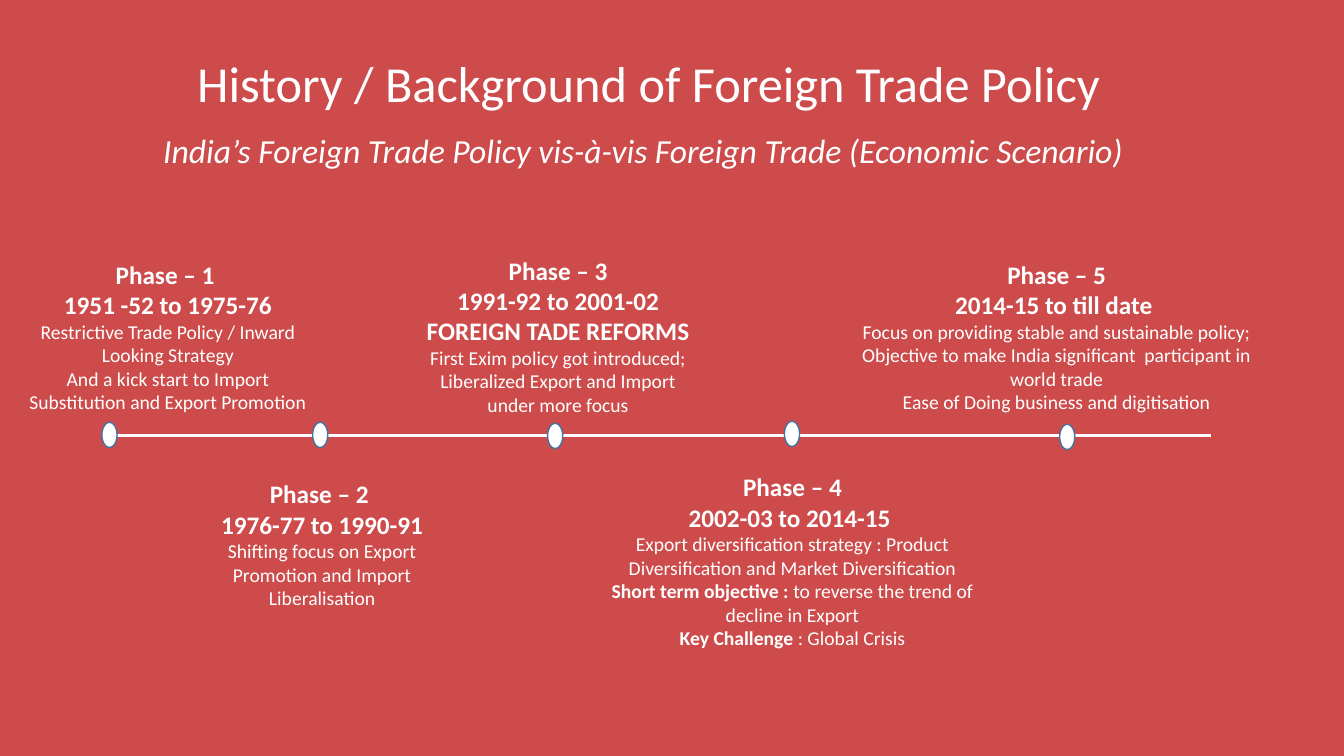
from dataclasses import dataclass

from lxml import etree
from pptx import Presentation
from pptx import util as u
from pptx.dml.color import RGBColor
from pptx.enum import shapes, text
from pptx.oxml import ns
from pptx.slide import Slide
from pptx.text.text import TextFrame

RED = RGBColor(0xCD, 0x4B, 0x4B)
WHITE = RGBColor(0xFF, 0xFF, 0xFF)
BLUE = RGBColor(0x43, 0x73, 0x9E)
FONT = "Calibri"
WIDTH, HEIGHT = u.Inches(13.33), u.Inches(7.5)
AXIS_LEFT, AXIS_RIGHT, AXIS_ROW = 7.58, 90.1, 57.6
DOT_WIDTH, DOT_HEIGHT = 1.13, 3.33


@dataclass(frozen=True)
class Run:
    words: str
    size: int = 14
    bold: bool = False
    italic: bool = False


@dataclass(frozen=True)
class Box:
    left: float
    top: float
    width: float
    height: float

    def emu(self) -> tuple[int, int, int, int]:
        return col(self.left), row(self.top), col(self.width), row(self.height)


@dataclass(frozen=True)
class Phase:
    box: Box
    dot_left: float
    dot_top: float
    paragraphs: list[list[Run]]


def col(percent: float) -> int:
    return round(WIDTH * percent / 100)


def row(percent: float) -> int:
    return round(HEIGHT * percent / 100)


def head(words: str) -> Run:
    return Run(words, 18, bold=True)


TITLE_BOX = Box(0, 6.27, 96.55, 17.47)
TITLE = [
    [Run("History / Background of Foreign Trade Policy", 36)],
    [Run("India’s Foreign Trade Policy vis-à-vis Foreign Trade (Economic Scenario)",
         24, italic=True), Run(" ", 36)],
]
PHASES = [
    Phase(Box(0.68, 33.6, 23.63, 22), 7.58, 55.87, [
        [head("Phase – 1 ")],
        [head("1951 -52 to 1975-76")],
        [Run("Restrictive Trade Policy / Inward Looking Strategy")],
        [Run("And a kick start to Import Substitution and Export Promotion")],
    ]),
    Phase(Box(15.23, 62.67, 17.48, 18.8), 23.26, 55.87, [
        [head("Phase – 2 ")],
        [head("1976-77 to 1990-91")],
        [Run("Shifting focus on Export Promotion and Import Liberalisation")],
    ]),
    Phase(Box(30.16, 33.07, 22.73, 22.93), 40.74, 56, [
        [head("Phase – 3")],
        [head("1991-92 to 2001-02 FOREIGN TADE REFORMS "),
         Run("First Exim policy got introduced; Liberalized Export and Import "
             "under more focus")],
    ]),
    Phase(Box(44.26, 61.73, 29.41, 25.07), 58.36, 55.73, [
        [head("Phase – 4")],
        [head("2002-03 to 2014-15 ")],
        [Run("Export diversification strategy : Product Diversification and "
             "Market Diversification")],
        [Run("Short term objective : ", bold=True),
         Run("to reverse the trend of decline in Export")],
        [Run("Key Challenge", bold=True), Run(" : Global Crisis")],
    ]),
    Phase(Box(63.39, 33.6, 30.46, 22), 78.84, 56.13, [
        [head("Phase – 5")],
        [head("2014-15 to till date ")],
        [Run("Focus on providing stable and sustainable policy;")],
        [Run("Objective to make India significant  participant in world trade")],
        [Run("Ease of Doing business and digitisation")],
    ]),
]


def write(tf: TextFrame, paragraphs: list[list[Run]]) -> None:
    tf.word_wrap = True
    tf.auto_size = text.MSO_AUTO_SIZE.NONE
    tf.vertical_anchor = text.MSO_ANCHOR.TOP
    for i, runs in enumerate(paragraphs):
        p = tf.add_paragraph() if i else tf.paragraphs[0]
        p.alignment = text.PP_ALIGN.CENTER
        for run in runs:
            r = p.add_run()
            r.text = run.words
            r.font.name = FONT
            r.font.size = u.Pt(run.size)
            r.font.bold = run.bold
            r.font.italic = run.italic
            r.font.color.rgb = WHITE


def add_title(s: Slide) -> None:
    sp = s.shapes.title
    sp.left, sp.top, sp.width, sp.height = TITLE_BOX.emu()
    write(sp.text_frame, TITLE)


def add_axis(s: Slide) -> None:
    line = s.shapes.add_connector(
        shapes.MSO_CONNECTOR.STRAIGHT,
        col(AXIS_LEFT), row(AXIS_ROW), col(AXIS_RIGHT), row(AXIS_ROW))
    line.line.color.rgb = WHITE
    line.line.width = u.Pt(2.25)
    etree.SubElement(line._element.spPr, ns.qn("a:effectLst"))


def add_phase(s: Slide, phase: Phase) -> None:
    dot = Box(phase.dot_left, phase.dot_top, DOT_WIDTH, DOT_HEIGHT)
    sp = s.shapes.add_shape(shapes.MSO_SHAPE.OVAL, *dot.emu())
    sp.shadow.inherit = False
    sp.fill.solid()
    sp.fill.fore_color.rgb = WHITE
    sp.line.color.rgb = BLUE
    sp.line.width = u.Pt(1)
    write(s.shapes.add_textbox(*phase.box.emu()).text_frame, phase.paragraphs)


def main() -> None:
    prs = Presentation()
    prs.slide_width, prs.slide_height = WIDTH, HEIGHT
    s = prs.slides.add_slide(prs.slide_layouts[5])
    s.background.fill.solid()
    s.background.fill.fore_color.rgb = RED
    add_title(s)
    add_axis(s)
    for phase in PHASES:
        add_phase(s, phase)
    prs.save("out.pptx")


if __name__ == "__main__":
    main()
